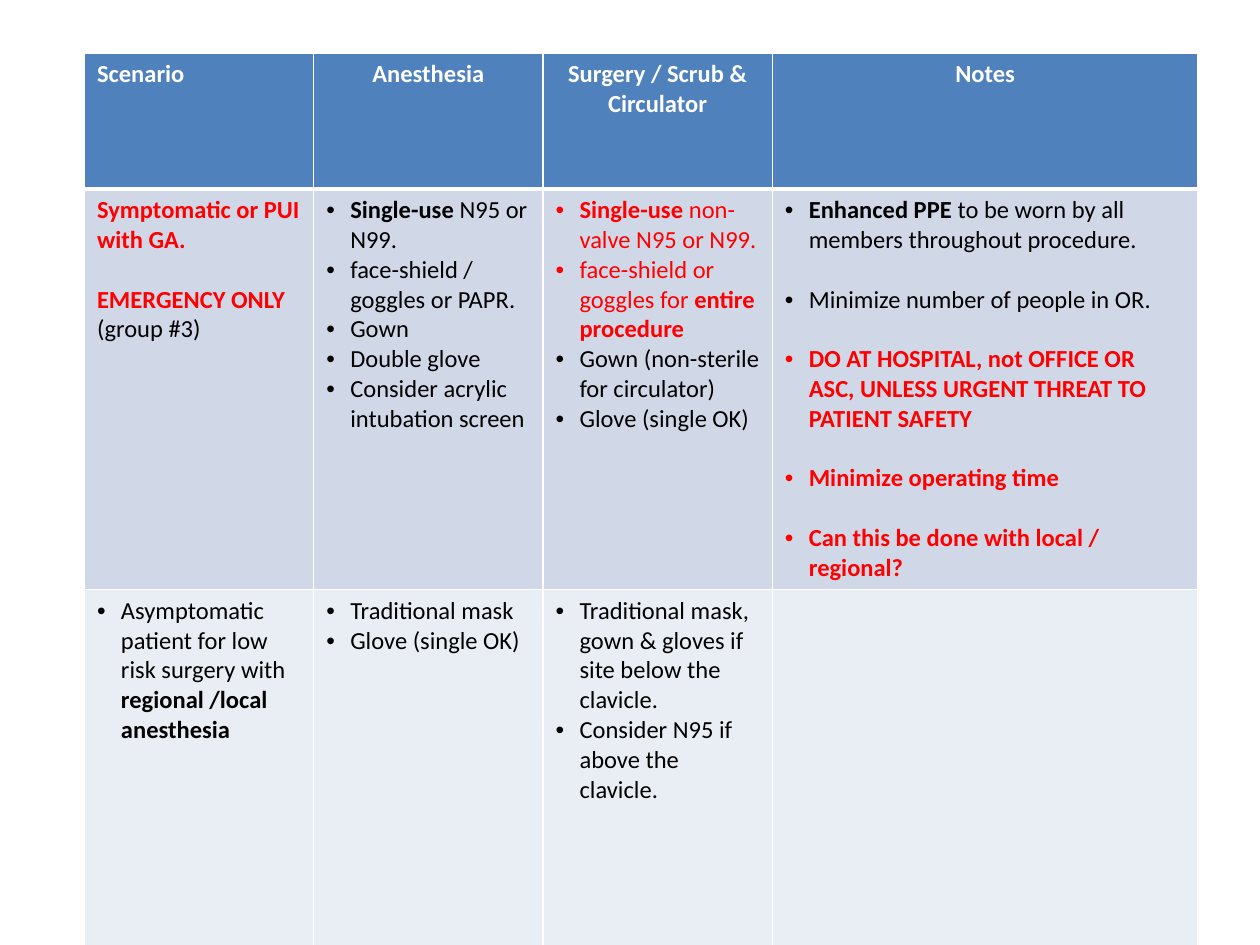
from dataclasses import dataclass

from lxml import etree
from pptx import Presentation
from pptx.dml.color import RGBColor
from pptx.enum import text
from pptx.oxml import ns
from pptx.util import Inches, Pt

WHITE = RGBColor(0xFF, 0xFF, 0xFF)
BLACK = RGBColor(0, 0, 0)
RED = RGBColor(0xFF, 0, 0)
BLUE = RGBColor(0x4F, 0x81, 0xBD)
BAND_DARK = RGBColor(0xD0, 0xD8, 0xE8)
BAND_LIGHT = RGBColor(0xE9, 0xED, 0xF4)

FONT = "Calibri"
SIZE = Pt(14)
GAP = Pt(17)
INDENT = Inches(0.19)
COLUMNS = [1.82, 1.82, 1.82, 3.38]
ROWS = [1.08, 3.18, 2.84]


@dataclass
class Run:
    text: str
    bold: bool = False
    color: RGBColor = BLACK


@dataclass
class Para:
    runs: list
    bullet: bool = True
    gap: bool = False
    centered: bool = False


def plain(words):
    return Para([Run(words)])


def alert(words, **kwargs):
    return Para([Run(words, True, RED)], **kwargs)


def heading(words, centered=True):
    return Para([Run(words, True, WHITE)], bullet=False, centered=centered)


HEADER = [
    [heading("Scenario", centered=False)],
    [heading("Anesthesia")],
    [heading("Surgery / Scrub &"), heading("Circulator")],
    [heading("Notes")],
]
SYMPTOMATIC = [
    [
        alert("Symptomatic or PUI with GA.", bullet=False),
        alert("EMERGENCY ONLY", bullet=False, gap=True),
        Para([Run("(group #3)")], bullet=False),
    ],
    [
        Para([Run("Single-use", True), Run(" N95 or N99.")]),
        plain("face-shield / goggles or PAPR."),
        plain("Gown"),
        plain("Double glove"),
        plain("Consider acrylic intubation screen"),
    ],
    [
        Para([Run("Single-use", True, RED),
              Run(" non-valve N95 or N99.", color=RED)]),
        Para([Run("face-shield or goggles for ", color=RED),
              Run("entire procedure", True, RED)]),
        plain("Gown (non-sterile for circulator)"),
        plain("Glove (single OK)"),
    ],
    [
        Para([Run("Enhanced PPE ", True),
              Run("to be worn by all members throughout procedure.")]),
        Para([Run("Minimize number of people in OR.")], gap=True),
        alert("DO AT HOSPITAL, not OFFICE OR ASC, UNLESS URGENT THREAT TO "
              "PATIENT SAFETY", gap=True),
        alert("Minimize operating time", gap=True),
        alert("Can this be done with local / regional?", gap=True),
    ],
]
ASYMPTOMATIC = [
    [Para([Run("Asymptomatic patient for low risk surgery with "),
           Run("regional /local anesthesia", True)])],
    [plain("Traditional mask"), plain("Glove (single OK)")],
    [
        plain("Traditional mask, gown & gloves if site below the clavicle."),
        plain("Consider N95 if above the clavicle."),
    ],
    [],
]


def add_bullet(p):
    pPr = p._p.get_or_add_pPr()
    pPr.set("marL", str(INDENT))
    pPr.set("indent", str(-INDENT))
    etree.SubElement(pPr, ns.qn("a:buFont"), typeface="Arial")
    etree.SubElement(pPr, ns.qn("a:buChar"), char="•")


def set_border(cell, side, width):
    tcPr = cell._tc.get_or_add_tcPr()
    ln = etree.SubElement(tcPr, ns.qn(f"a:ln{side}"), w=str(Pt(width)))
    fill = etree.SubElement(ln, ns.qn("a:solidFill"))
    etree.SubElement(fill, ns.qn("a:srgbClr"), val=str(WHITE))


def write_paragraph(p, para):
    p.alignment = text.PP_ALIGN.CENTER if para.centered else text.PP_ALIGN.LEFT
    if para.gap:
        p.space_before = GAP
    if para.bullet:
        add_bullet(p)
    for run in para.runs:
        r = p.add_run()
        r.text = run.text
        r.font.name = FONT
        r.font.size = SIZE
        r.font.bold = run.bold
        r.font.color.rgb = run.color


def fill_cell(cell, paras, color, top, bottom):
    for side, width in (("L", 1), ("R", 1), ("T", top), ("B", bottom)):
        set_border(cell, side, width)
    cell.fill.solid()
    cell.fill.fore_color.rgb = color
    tf = cell.text_frame
    for i, para in enumerate(paras):
        write_paragraph(tf.add_paragraph() if i else tf.paragraphs[0], para)


def add_ppe_table(slide):
    frame = slide.shapes.add_table(
        len(ROWS), len(COLUMNS), Inches(0.67), Inches(0.42),
        Inches(sum(COLUMNS)), Inches(sum(ROWS)))
    table = frame.table
    table.horz_banding = False
    for column, width in zip(table.columns, COLUMNS):
        column.width = Inches(width)
    for row, height in zip(table.rows, ROWS):
        row.height = Inches(height)
    bands = [
        (HEADER, BLUE, 1, 3),
        (SYMPTOMATIC, BAND_DARK, 3, 1),
        (ASYMPTOMATIC, BAND_LIGHT, 1, 1),
    ]
    for row, (cells, color, top, bottom) in zip(table.rows, bands):
        for cell, paras in zip(row.cells, cells):
            fill_cell(cell, paras, color, top, bottom)


def main():
    prs = Presentation()
    prs.slide_width = Inches(10)
    prs.slide_height = Inches(7.5)
    slide = prs.slides.add_slide(prs.slide_layouts[6])
    add_ppe_table(slide)
    prs.save("out.pptx")


if __name__ == "__main__":
    main()
